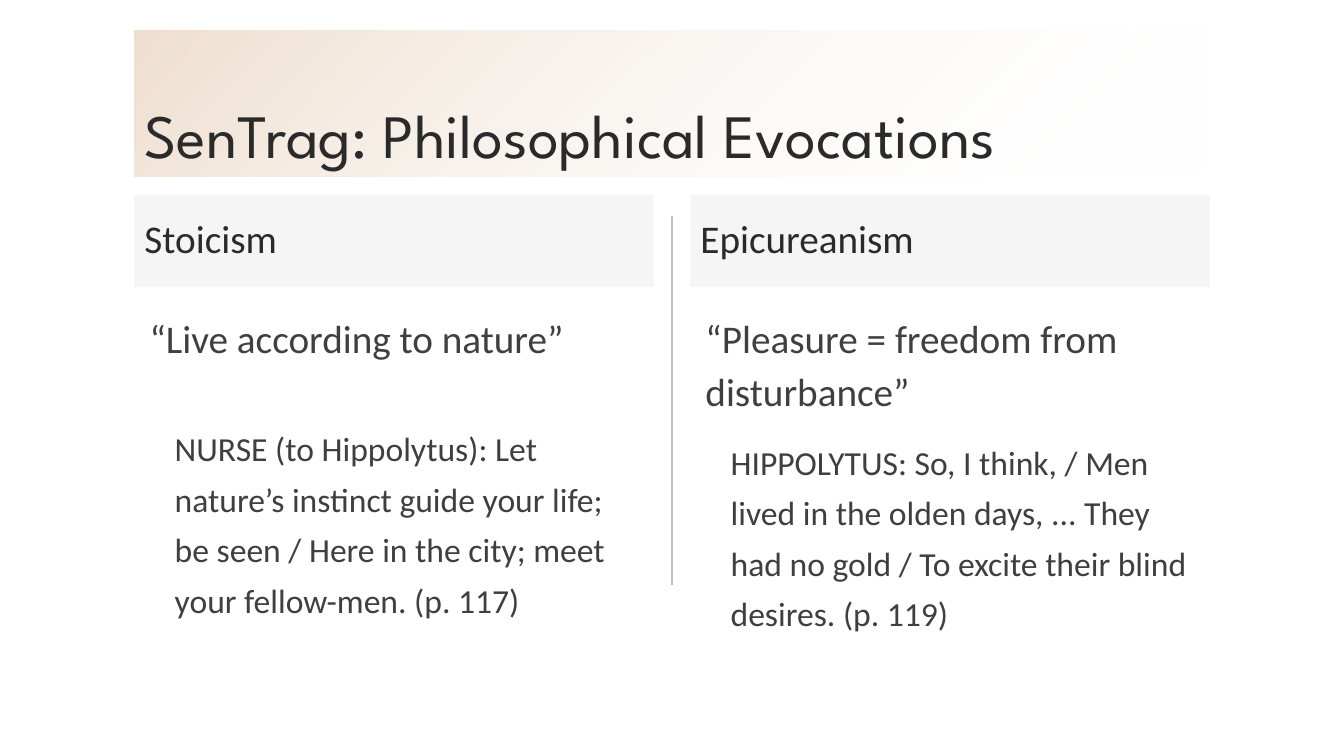
from lxml import etree
from pptx import Presentation, util as u
from pptx.dml import color
from pptx.enum import shapes, text
from pptx.oxml import ns

WIDTH, HEIGHT = 13.33, 7.5
MARGIN = WIDTH / 10
CONTENT_WIDTH = WIDTH - 2 * MARGIN
COLUMN_WIDTH = 5.15
COLUMN_LEFTS = (MARGIN, WIDTH - MARGIN - COLUMN_WIDTH)
INK, BODY_INK, GREY = "2A2A2A", "3F3F3F", "BFBFBF"

# heading, maxim, whether a line break follows the maxim, quotation
COLUMNS = (
    ("Stoicism", "“Live according to nature”", True,
     "NURSE (to Hippolytus): Let nature’s instinct guide your life; "
     "be seen / Here in the city; meet your fellow-men. (p. 117)"),
    ("Epicureanism", "“Pleasure = freedom from disturbance”", False,
     "HIPPOLYTUS: So, I think, / Men lived in the olden days, ... "
     "They had no gold / To excite their blind desires. (p. 119)"),
)


def rgb(code):
    return color.RGBColor.from_string(code)


def add_child(parent, tag, **attributes):
    return etree.SubElement(parent, ns.qn(tag), attributes)


def set_opacity(shape, *percents):
    """Give each fill colour of the shape, in order, its opacity."""
    for colour, percent in zip(shape._element.spPr.iter(ns.qn("a:srgbClr")), percents):
        add_child(colour, "a:alpha", val=str(percent * 1000))


def place(shape, left, top, width, height, anchor):
    shape.left, shape.top = u.Inches(left), u.Inches(top)
    shape.width, shape.height = u.Inches(width), u.Inches(height)
    frame = shape.text_frame
    frame.word_wrap = True
    frame.auto_size = text.MSO_AUTO_SIZE.NONE
    frame.vertical_anchor = anchor
    return frame


def write(paragraph, words, size, ink, spacing, before=0, indent=0, font="Calibri"):
    paragraph.text = words
    paragraph.alignment = text.PP_ALIGN.LEFT
    paragraph.line_spacing = spacing
    paragraph.space_before = u.Pt(before)
    paragraph.font.name = font
    paragraph.font.size = u.Pt(size)
    paragraph.font.bold = False
    paragraph.font.color.rgb = rgb(ink)
    properties = paragraph._p.get_or_add_pPr()
    properties.set("marL", str(u.Inches(indent)))
    properties.set("indent", "0")
    properties.insert_element_before(
        etree.Element(ns.qn("a:buNone")), "a:tabLst", "a:defRPr", "a:extLst")


def fill_title(shape, words):
    frame = place(shape, MARGIN, 0.3, CONTENT_WIDTH, 1.45, text.MSO_ANCHOR.BOTTOM)
    write(frame.paragraphs[0], words, 44, INK, 0.9, font="League Spartan")
    shape.fill.gradient()
    shape.fill.gradient_angle = 315
    for stop, code in zip(shape.fill.gradient_stops, ("CE9F71", "FFFFFF")):
        stop.color.rgb = rgb(code)
    set_opacity(shape, 34, 0)


def fill_heading(shape, left, words):
    frame = place(shape, left, 1.93, COLUMN_WIDTH, 0.92, text.MSO_ANCHOR.MIDDLE)
    write(frame.paragraphs[0], words, 28, INK, 0.9)
    shape.fill.solid()
    shape.fill.fore_color.rgb = rgb(GREY)
    set_opacity(shape, 15)


def fill_body(shape, left, maxim, break_after, quotation):
    frame = place(shape, left, HEIGHT * 0.4, COLUMN_WIDTH, HEIGHT / 2, text.MSO_ANCHOR.TOP)
    first, second = frame.paragraphs[0], frame.add_paragraph()
    write(first, maxim, 28, BODY_INK, 1.14, 12, 0.05)
    if break_after:
        first.add_line_break()
        add_child(first._p, "a:endParaRPr", sz="2400")
    second.level = 1
    write(second, quotation, 24, BODY_INK, 1.25, 12, 0.3)


def add_divider(slide):
    middle = u.Inches(WIDTH / 2)
    divider = slide.shapes.add_connector(
        shapes.MSO_CONNECTOR.STRAIGHT, middle, u.Inches(2.14), middle, u.Inches(5.8))
    divider.line.color.rgb = rgb(GREY)
    divider.line.width = u.Pt(1)
    add_child(divider._element.spPr, "a:effectLst")


def main():
    presentation = Presentation()
    presentation.slide_width, presentation.slide_height = u.Inches(WIDTH), u.Inches(HEIGHT)
    comparison = presentation.slide_layouts.get_by_name("Comparison")
    slide = presentation.slides.add_slide(comparison)
    title, *parts = slide.placeholders
    add_divider(slide)
    fill_title(title, "SenTrag: Philosophical Evocations")
    for left, heading_shape, body_shape, (heading, *body) in zip(
            COLUMN_LEFTS, parts[::2], parts[1::2], COLUMNS):
        fill_heading(heading_shape, left, heading)
        fill_body(body_shape, left, *body)
    presentation.save("out.pptx")


if __name__ == "__main__":
    main()
